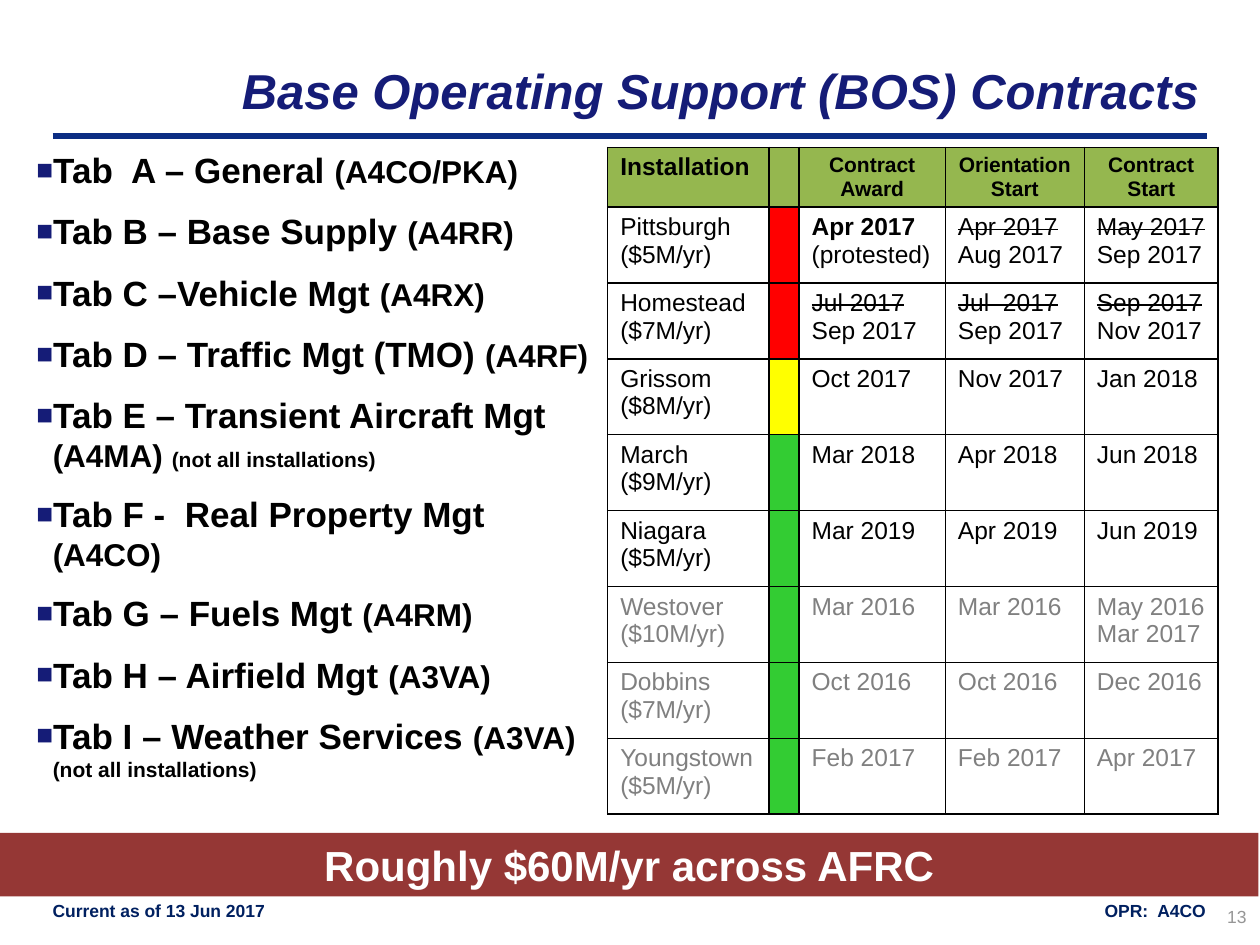
from dataclasses import dataclass

from lxml import etree
from pptx import Presentation
from pptx.dml.color import RGBColor
from pptx.enum.shapes import MSO_CONNECTOR, MSO_SHAPE
from pptx.enum.text import MSO_ANCHOR, MSO_AUTO_SIZE, PP_ALIGN
from pptx.oxml.ns import qn
from pptx.util import Cm, Pt

LEFT, CENTER, RIGHT = PP_ALIGN.LEFT, PP_ALIGN.CENTER, PP_ALIGN.RIGHT
MIDDLE, BOTTOM = MSO_ANCHOR.MIDDLE, MSO_ANCHOR.BOTTOM
NO_AUTOFIT = MSO_AUTO_SIZE.NONE
STRAIGHT, RECTANGLE = MSO_CONNECTOR.STRAIGHT, MSO_SHAPE.RECTANGLE

FONT = "Arial"
BLACK = RGBColor(0x00, 0x00, 0x00)
WHITE = RGBColor(0xFF, 0xFF, 0xFF)
NAVY = RGBColor(0x15, 0x1C, 0x77)
RULE_BLUE = RGBColor(0x0C, 0x2D, 0x83)
FOOTER_BLUE = RGBColor(0x00, 0x20, 0x60)
MAROON = RGBColor(0x95, 0x37, 0x35)
HEADER_GREEN = RGBColor(0x95, 0xB7, 0x4F)
RED = RGBColor(0xFF, 0x00, 0x00)
YELLOW = RGBColor(0xFF, 0xFF, 0x00)
GREEN = RGBColor(0x33, 0xCC, 0x33)
GRAY = RGBColor(0x80, 0x80, 0x80)
NUMBER_GRAY = RGBColor(0x96, 0x96, 0x96)


@dataclass(frozen=True)
class Tab:
    name: str
    office: str
    remark: str = ""


@dataclass(frozen=True)
class Contract:
    installation: str
    cost: str
    status: RGBColor
    dates: tuple[str, str, str]
    revised: tuple[str, str, str] = ("", "", "")
    struck: tuple[bool, bool, bool] = (False, False, False)
    bold_award: bool = False
    color: RGBColor = BLACK


@dataclass(frozen=True)
class Label:
    text: str
    left: float
    top: float
    width: float
    height: float
    color: RGBColor
    bold: bool = True
    align: PP_ALIGN = LEFT


TABS = [
    Tab("Tab  A – General ", "(A4CO/PKA)"),
    Tab("Tab B – Base Supply ", "(A4RR)"),
    Tab("Tab C –Vehicle Mgt ", "(A4RX)"),
    Tab("Tab D – Traffic Mgt (TMO) ", "(A4RF)"),
    Tab("Tab E – Transient Aircraft Mgt ", "(A4MA) ", "(not all installations)"),
    Tab("Tab F -  Real Property Mgt ", "(A4CO)"),
    Tab("Tab G – Fuels Mgt ", "(A4RM)"),
    Tab("Tab H – Airfield Mgt ", "(A3VA)"),
    Tab("Tab I – Weather Services ", "(A3VA) ", "(not all installations)"),
]
HEADINGS = ["Installation", "", "Contract Award", "Orientation Start", "Contract Start"]
CONTRACTS = [
    Contract("Pittsburgh", "($5M/yr)", RED, ("Apr 2017", "Apr 2017", "May 2017"),
             ("(protested)", "Aug 2017", "Sep 2017"), (False, True, True), True),
    Contract("Homestead", "($7M/yr)", RED, ("Jul 2017", "Jul  2017", "Sep 2017"),
             ("Sep 2017", "Sep 2017", "Nov 2017"), (True, True, True)),
    Contract("Grissom", "($8M/yr)", YELLOW, ("Oct 2017", "Nov 2017", "Jan 2018")),
    Contract("March", "($9M/yr)", GREEN, ("Mar 2018", "Apr 2018", "Jun 2018")),
    Contract("Niagara", "($5M/yr)", GREEN, ("Mar 2019", "Apr 2019", "Jun 2019")),
    Contract("Westover", "($10M/yr)", GREEN, ("Mar 2016", "Mar 2016", "May 2016"),
             ("", "", "Mar 2017"), color=GRAY),
    Contract("Dobbins", "($7M/yr)", GREEN, ("Oct 2016", "Oct 2016", "Dec 2016"), color=GRAY),
    Contract("Youngstown", "($5M/yr)", GREEN, ("Feb 2017", "Feb 2017", "Apr 2017"), color=GRAY),
]
COLUMN_WIDTHS = [3.25, 0.6, 2.95, 2.8, 2.7]
HEADER_HEIGHT, ROW_HEIGHT = 1.2, 1.53
LABELS = [
    Label("13", 22.2, 18.14, 3.18, 0.84, NUMBER_GRAY, False, RIGHT),
    Label("Current as of 13 Jun 2017", 0.81, 18.01, 5.1, 0.68, FOOTER_BLUE),
    Label("OPR:  A4CO", 22.02, 18.01, 2.72, 0.68, FOOTER_BLUE),
]


def style(run, size: float, color: RGBColor, bold: bool = False) -> None:
    run.font.name = FONT
    run.font.size = Pt(size)
    run.font.bold = bold
    run.font.color.rgb = color


def place(shape, left: float, top: float, width: float, height: float) -> None:
    shape.left, shape.top = Cm(left), Cm(top)
    shape.width, shape.height = Cm(width), Cm(height)


def add_title(slide) -> None:
    title = slide.shapes.title
    place(title, 1, 0.25, 23.42, 2.39)
    frame = title.text_frame
    frame.text = "Base Operating Support (BOS) Contracts"
    frame.auto_size = NO_AUTOFIT
    frame.vertical_anchor = BOTTOM
    frame.margin_bottom = Cm(0.23)
    heading = frame.paragraphs[0]
    heading.alignment = RIGHT
    heading.line_spacing = 0.85
    style(heading.runs[0], 28, NAVY, True)
    heading.runs[0].font.italic = True
    rule = slide.shapes.add_connector(STRAIGHT, Cm(1.06), Cm(2.74), Cm(24.34), Cm(2.74))
    rule.line.color.rgb = RULE_BLUE
    rule.line.width = Pt(3)
    etree.SubElement(rule._element.spPr, qn("a:effectLst"))


def add_bullet(paragraph) -> None:
    properties = paragraph._p.get_or_add_pPr()
    properties.set("marL", str(Cm(0.33)))
    properties.set("indent", str(-Cm(0.33)))
    bullet_color = etree.SubElement(properties, qn("a:buClr"))
    etree.SubElement(bullet_color, qn("a:srgbClr"), val=str(NAVY))
    etree.SubElement(properties, qn("a:buSzPct"), val="80000")
    etree.SubElement(properties, qn("a:buFont"), typeface=FONT)
    etree.SubElement(properties, qn("a:buChar"), char="■")


def add_tabs(slide) -> None:
    body = slide.placeholders[1]
    place(body, 0.48, 2.87, 11.71, 14.81)
    frame = body.text_frame
    frame.auto_size = NO_AUTOFIT
    for index, tab in enumerate(TABS):
        entry = frame.add_paragraph() if index else frame.paragraphs[0]
        add_bullet(entry)
        entry.space_before = Pt(11 if index else 0)
        for text, size in ((tab.name, 20), (tab.office, 18), (tab.remark, 12)):
            if text:
                run = entry.add_run()
                run.text = text
                style(run, size, BLACK, True)


def add_borders(cell) -> None:
    properties = cell._tc.get_or_add_tcPr()
    for side in ("a:lnL", "a:lnR", "a:lnT", "a:lnB"):
        border = etree.SubElement(properties, qn(side), w=str(Pt(1)))
        fill = etree.SubElement(border, qn("a:solidFill"))
        etree.SubElement(fill, qn("a:srgbClr"), val=str(BLACK))


def fill_cell(cell, text: str, fill: RGBColor, size: float = 14, color: RGBColor = BLACK,
              bold: bool = False, struck: bool = False, align: PP_ALIGN = LEFT) -> None:
    add_borders(cell)
    cell.fill.solid()
    cell.fill.fore_color.rgb = fill
    cell.text_frame.text = text
    for index, line in enumerate(cell.text_frame.paragraphs):
        line.alignment = align
        for run in line.runs:
            style(run, size, color, bold and index == 0)
            if struck and index == 0:
                run.font._element.set("strike", "sngStrike")


def add_schedule(slide) -> None:
    height = HEADER_HEIGHT + ROW_HEIGHT * len(CONTRACTS)
    schedule = slide.shapes.add_table(len(CONTRACTS) + 1, len(HEADINGS), Cm(12.25), Cm(2.97),
                                      Cm(sum(COLUMN_WIDTHS)), Cm(height)).table
    schedule.first_row = schedule.horz_banding = False
    for column, width in zip(schedule.columns, COLUMN_WIDTHS):
        column.width = Cm(width)
    for index, row in enumerate(schedule.rows):
        row.height = Cm(ROW_HEIGHT if index else HEADER_HEIGHT)
    for column, heading in enumerate(HEADINGS):
        fill_cell(schedule.cell(0, column), heading, HEADER_GREEN, 12 if column else 14,
                  bold=True, align=CENTER if column else LEFT)
    for row, contract in enumerate(CONTRACTS, 1):
        fill_cell(schedule.cell(row, 0), f"{contract.installation}\n{contract.cost}", WHITE,
                  color=contract.color)
        fill_cell(schedule.cell(row, 1), "", contract.status)
        milestones = zip(contract.dates, contract.revised, contract.struck)
        for column, (date, revised, struck) in enumerate(milestones, 2):
            fill_cell(schedule.cell(row, column), f"{date}\n{revised}" if revised else date, WHITE,
                      color=contract.color, bold=contract.bold_award and column == 2, struck=struck)


def add_banner(slide) -> None:
    banner = slide.shapes.add_shape(RECTANGLE, 0, Cm(16.79), Cm(25.37), Cm(1.28))
    banner.shadow.inherit = False
    banner.fill.solid()
    banner.fill.fore_color.rgb = MAROON
    banner.line.fill.background()
    banner.text_frame.text = "Roughly $60M/yr across AFRC"
    banner.text_frame.vertical_anchor = MIDDLE
    total = banner.text_frame.paragraphs[0]
    total.alignment = CENTER
    style(total.runs[0], 24, WHITE, True)


def add_label(slide, label: Label) -> None:
    frame = slide.shapes.add_textbox(Cm(label.left), Cm(label.top),
                                     Cm(label.width), Cm(label.height)).text_frame
    frame.word_wrap = True
    frame.text = label.text
    frame.paragraphs[0].alignment = label.align
    style(frame.paragraphs[0].runs[0], 10, label.color, label.bold)


def main() -> None:
    deck = Presentation()
    deck.slide_width, deck.slide_height = Cm(25.4), Cm(19.05)
    slide = deck.slides.add_slide(deck.slide_layouts[1])
    add_title(slide)
    add_banner(slide)
    add_tabs(slide)
    add_schedule(slide)
    for label in LABELS:
        add_label(slide, label)
    deck.save("out.pptx")


if __name__ == "__main__":
    main()
